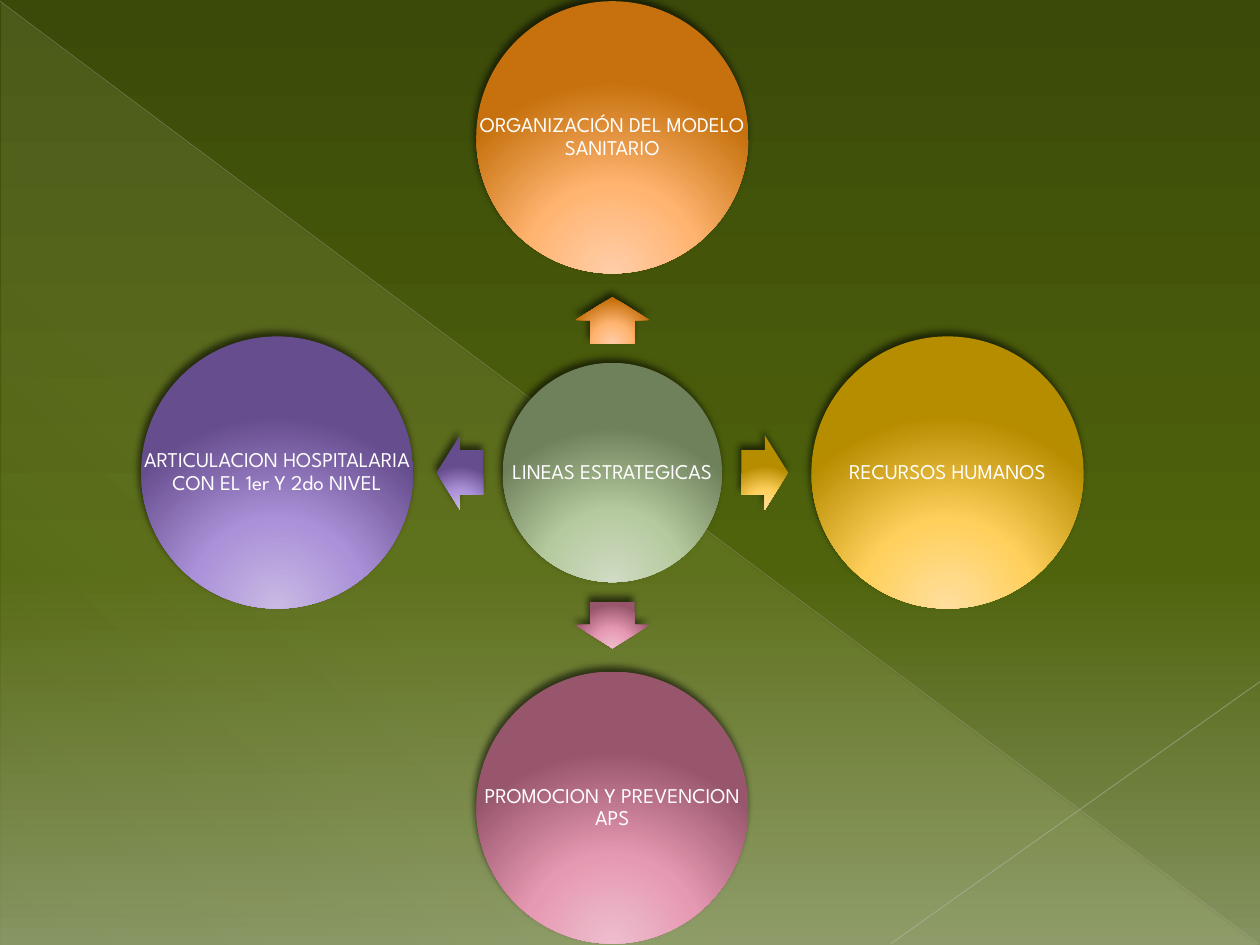
from lxml import etree
from pptx import Presentation
from pptx.dml.color import RGBColor
from pptx.enum.shapes import MSO_CONNECTOR, MSO_SHAPE
from pptx.enum.text import MSO_ANCHOR, PP_ALIGN
from pptx.oxml import parse_xml
from pptx.oxml.ns import nsdecls, qn
from pptx.util import Inches, Pt

OVAL, ARROW = MSO_SHAPE.OVAL, MSO_SHAPE.RIGHT_ARROW
TRIANGLE, LINE = MSO_SHAPE.RIGHT_TRIANGLE, MSO_CONNECTOR.STRAIGHT
MIDDLE, CENTER = MSO_ANCHOR.MIDDLE, PP_ALIGN.CENTER

# Gradient stops are (percent, colour, opacity); ball colours run light to dark
THEME = {
    "font": "League Spartan", "size": Pt(12), "text": "FFFFFF",
    "shadow": "000000",
    "back": [(0, "3B4A09", 100), (60, "4F630C", 100), (100, "849360", 100)],
    "veil": [(0, "FEFAC9", 10), (70, "FEFAC9", 8), (100, "FEFAC9", 1)],
    "green": ("CFDBC3", "B6CA9F", "6F815B"),
    "orange": ("FFCEAA", "FFB470", "C6710D"),
    "gold": ("FFDF9F", "FFD05C", "B78D00"),
    "pink": ("EDBECD", "E699B2", "98566C"),
    "violet": ("C9BAE4", "AB91D8", "664D8D"),
}
GLOW = ('<a:path path="circle"><a:fillToRect l="50000" t="155000" '
        'r="50000" b="-55000"/></a:path>')


def blend(fill, root, stops, shade):
    """Give the first fill under root a gradient with the given shade XML."""
    fill.solid()
    old = next(root.iter(qn("a:solidFill")))
    marks = "".join(
        f'<a:gs pos="{pos * 1000}"><a:srgbClr val="{tint}">'
        f'<a:alpha val="{alpha * 1000}"/></a:srgbClr></a:gs>'
        for pos, tint, alpha in stops)
    old.getparent().replace(old, parse_xml(
        f'<a:gradFill {nsdecls("a")} rotWithShape="0">'
        f'<a:gsLst>{marks}</a:gsLst>{shade}</a:gradFill>'))


def orb(kind, x, y, wide, high, tints):
    """Add a glowing shape with a soft shadow, centred on x, y."""
    shape = slide.shapes.add_shape(
        kind, Inches(x - wide / 2), Inches(y - high / 2),
        Inches(wide), Inches(high))
    shape.line.fill.background()
    stops = [(pos, tint, 100) for pos, tint in zip((0, 46, 100), tints)]
    blend(shape.fill, shape._element.spPr, stops, GLOW)
    shape.shadow.inherit = False
    effect = shape._element.spPr.find(qn("a:effectLst"))
    effect.append(parse_xml(
        f'<a:outerShdw {nsdecls("a")} blurRad="{Pt(4)}" dist="{Pt(3)}" '
        f'dir="{245 * 60000}" rotWithShape="0">'
        f'<a:srgbClr val="{THEME["shadow"]}"><a:alpha val="60000"/>'
        '</a:srgbClr></a:outerShdw>'))
    return shape


deck = Presentation()
deck.slide_width, deck.slide_height = Inches(10), Inches(7.5)
slide = deck.slides.add_slide(deck.slide_layouts[6])

# Backdrop
blend(slide.background.fill, slide._element, THEME["back"],
      f'<a:lin ang="{90 * 60000}" scaled="0"/>')
veil = slide.shapes.add_shape(
    TRIANGLE, Inches(0.01), Inches(0.02), Inches(9.98), Inches(7.48))
veil.line.fill.background()
veil.shadow.inherit = False
blend(veil.fill, veil._element.spPr, THEME["veil"],
      f'<a:lin ang="{133 * 60000}" scaled="0"/>')

for ends, tint, width, alpha in (
        ((0, 0.01, 9.99, 7.49), "BABDB3", 0.39, 35),
        ((10, 5.41, 7.07, 7.49), "C1C4BC", 0.47, 45)):
    ray = slide.shapes.add_connector(LINE, *map(Inches, ends))
    ray.line.color.rgb = RGBColor.from_string(tint)
    ray.line.width = Pt(width)
    props = ray._element.spPr
    hue = next(props.iter(qn("a:srgbClr")))
    etree.SubElement(hue, qn("a:alpha")).set("val", str(alpha * 1000))
    etree.SubElement(props, qn("a:effectLst"))

# Hub with four balls around it: text, colour, direction, angle, diameter
HUB_X, HUB_Y = 4.86, 3.75
REACH, STEP = 2.66, 1.21
BALLS = (
    ("LINEAS ESTRATEGICAS", "green", (0, 0), None, 1.74),
    ("ORGANIZACIÓN DEL MODELO SANITARIO", "orange", (0, -1), 270, 2.16),
    ("RECURSOS HUMANOS", "gold", (1, 0), 0, 2.16),
    ("PROMOCION Y PREVENCION APS", "pink", (0, 1), 90, 2.16),
    ("ARTICULACION HOSPITALARIA CON EL 1er Y 2do NIVEL", "violet",
     (-1, 0), 180, 2.16),
)
for words, tone, (dx, dy), angle, size in BALLS:
    if angle is not None:
        arrow = orb(ARROW, HUB_X + dx * STEP, HUB_Y + dy * STEP,
                    0.37, 0.59, THEME[tone])
        arrow.adjustments[0], arrow.adjustments[1] = 0.6, 0.5
        arrow.rotation = angle
    ball = orb(OVAL, HUB_X + dx * REACH, HUB_Y + dy * REACH,
               size, size, THEME[tone])
    label = slide.shapes.add_textbox(
        ball.left, ball.top, ball.width, ball.height)
    frame = label.text_frame
    frame.word_wrap = True
    frame.vertical_anchor = MIDDLE
    frame.margin_left = frame.margin_right = Inches(0.02)
    frame.margin_top = frame.margin_bottom = Inches(0.02)
    para = frame.paragraphs[0]
    para.alignment = CENTER
    para.line_spacing = 0.9
    run = para.add_run()
    run.text = words
    run.font.name, run.font.size = THEME["font"], THEME["size"]
    run.font.color.rgb = RGBColor.from_string(THEME["text"])

deck.save("out.pptx")
